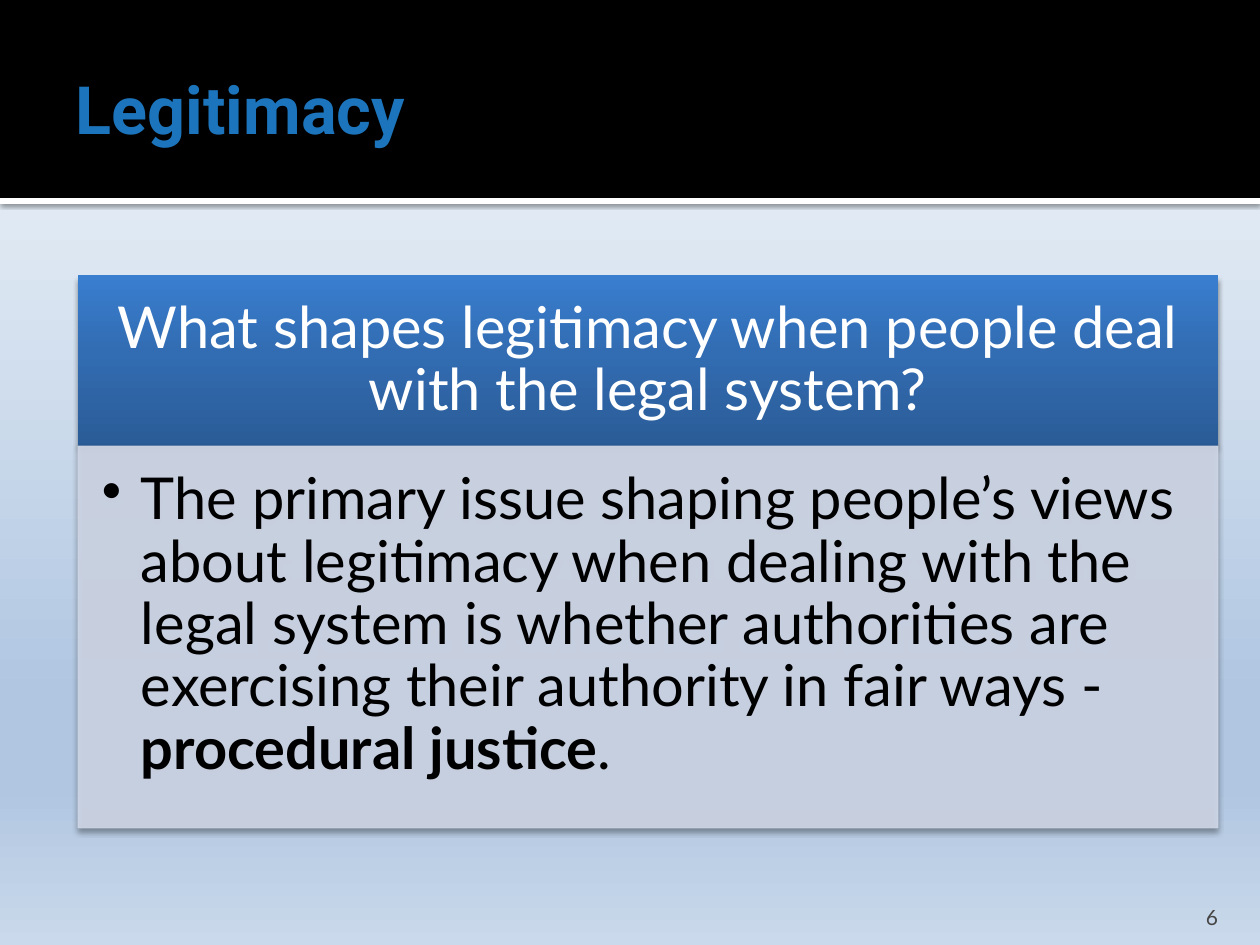
from lxml.etree import SubElement
from pptx import Presentation
from pptx.dml.color import RGBColor
from pptx.enum.shapes import MSO_SHAPE
from pptx.enum.text import MSO_ANCHOR, PP_ALIGN
from pptx.oxml.ns import qn
from pptx.util import Pt

PX = 914400 / 126  # EMU in one px
WIDTH, HEIGHT = 1260, 945


def px(length):
    return round(length * PX)


def color(hex_string):
    return RGBColor.from_string(hex_string)


def add_color(parent, hex_string, alpha=100):
    element = SubElement(parent, qn("a:srgbClr"), val=hex_string)
    if alpha < 100:
        SubElement(element, qn("a:alpha"), val=str(alpha * 1000))


def set_gradient(fill, owner, stops, angle):
    """Fill with (percent, hex) stops; the angle is counterclockwise."""
    fill.gradient()
    fill.gradient_angle = angle
    stop_list = next(owner.iter(qn("a:gsLst")))
    for stop in list(stop_list):
        stop_list.remove(stop)
    for percent, hex_string in stops:
        stop = SubElement(stop_list, qn("a:gs"), pos=str(percent * 1000))
        add_color(stop, hex_string)


def add_shadow(shape, alpha, blur, distance):
    effects = next(shape.element.iter(qn("a:effectLst")))
    shadow = SubElement(effects, qn("a:outerShdw"), blurRad=str(Pt(blur)),
                        dist=str(Pt(distance)), dir="5400000", rotWithShape="0")
    add_color(shadow, "000000", alpha)


def set_alpha(shape, percent):
    for element in shape.element.spPr.iter(qn("a:srgbClr")):
        SubElement(element, qn("a:alpha"), val=str(percent * 1000))


def add_rectangle(slide, box, fill=None):
    shape = slide.shapes.add_shape(MSO_SHAPE.RECTANGLE, *map(px, box))
    shape.shadow.inherit = False
    shape.line.fill.background()
    if fill:
        shape.fill.solid()
        shape.fill.fore_color.rgb = color(fill)
    return shape


def write_text(shape, runs, insets, hex_string, anchor, paragraph_format, font_format):
    """Write (text, bold) runs as one paragraph."""
    frame = shape.text_frame
    frame.word_wrap = True
    frame.vertical_anchor = anchor
    for side, inset in zip(("left", "top", "right", "bottom"), insets):
        setattr(frame, f"margin_{side}", px(inset))
    paragraph = frame.paragraphs[0]
    for name, value in paragraph_format.items():
        setattr(paragraph, name, value)
    for text, bold in runs:
        run = paragraph.add_run()
        run.text = text
        run.font.bold = bold
        run.font.color.rgb = color(hex_string)
        for name, value in font_format.items():
            setattr(run.font, name, value)
    return paragraph


def add_title_band(slide, left, top, width, height):
    # White stripe below the black band
    stripe = add_rectangle(slide, (left, top + height, width, 6), "FFFFFF")
    add_shadow(stripe, 60, 2.5, 0.8)
    add_rectangle(slide, (left, top, width, height), "000000")
    title = slide.shapes.add_textbox(*map(px, (left + 63, top + 21, 829, 173)))
    write_text(title, [("Legitimacy", True)], (13, 6, 6, 6), "1C75BC", MSO_ANCHOR.MIDDLE,
               {"alignment": PP_ALIGN.LEFT}, {"size": Pt(38), "name": "Roboto"})


def add_question_card(slide, left, top, width, height):
    heading_height = 171
    font_format = {"size": Pt(33), "name": "Lato"}

    # Question
    heading = add_rectangle(slide, (left, top, width, heading_height))
    set_gradient(heading.fill, heading.element,
                 [(0, "2A5C97"), (55, "326CB2"), (100, "3A7ED0")], 90)
    add_shadow(heading, 38, 3.1, 2)
    write_text(heading, [("What shapes legitimacy when people deal with the legal system?", False)],
               (33, 19, 33, 19), "FFFFFF", MSO_ANCHOR.MIDDLE,
               {"alignment": PP_ALIGN.CENTER, "line_spacing": 0.9}, font_format)

    # Answer
    body = add_rectangle(slide, (left, top + heading_height, width, height - heading_height), "D0D8E8")
    body.line.color.rgb = color("D0D8E8")
    body.line.width = Pt(0.5)
    set_alpha(body, 90)
    add_shadow(body, 38, 3.1, 2)
    answer = [
        ("The primary issue shaping people’s views about legitimacy when dealing with the legal "
         "system is whether authorities are exercising their authority in fair ways - ", False),
        ("procedural justice", True),
        (".", False),
    ]
    paragraph = write_text(body, answer, (24, 24, 33, 37), "000000", MSO_ANCHOR.TOP,
                           {"alignment": PP_ALIGN.LEFT, "line_spacing": 0.9, "level": 1}, font_format)
    properties = paragraph._p.get_or_add_pPr()
    properties.set("marL", str(px(39)))
    properties.set("indent", str(px(-39)))
    SubElement(properties, qn("a:buChar"), char="•")


def add_page_number(slide, left, top, width, height):
    number = slide.shapes.add_textbox(*map(px, (left, top, width, height)))
    write_text(number, [("6", False)], (13, 6, 13, 0), "454545", MSO_ANCHOR.BOTTOM,
               {"alignment": PP_ALIGN.RIGHT}, {"size": Pt(12), "name": "Lato"})


def main():
    presentation = Presentation()
    presentation.slide_width, presentation.slide_height = px(WIDTH), px(HEIGHT)
    slide = presentation.slides.add_slide(presentation.slide_layouts[6])
    set_gradient(slide.background.fill, slide.element,
                 [(0, "F6F9FC"), (74, "B0C6E1"), (83, "B0C6E1"), (100, "CAD9EB")], 270)
    add_title_band(slide, 0, 0, WIDTH, 198)
    add_question_card(slide, 78, 275, 1140, 553)
    add_page_number(slide, 1130, 892, 101, 38)
    presentation.save("out.pptx")


if __name__ == "__main__":
    main()
